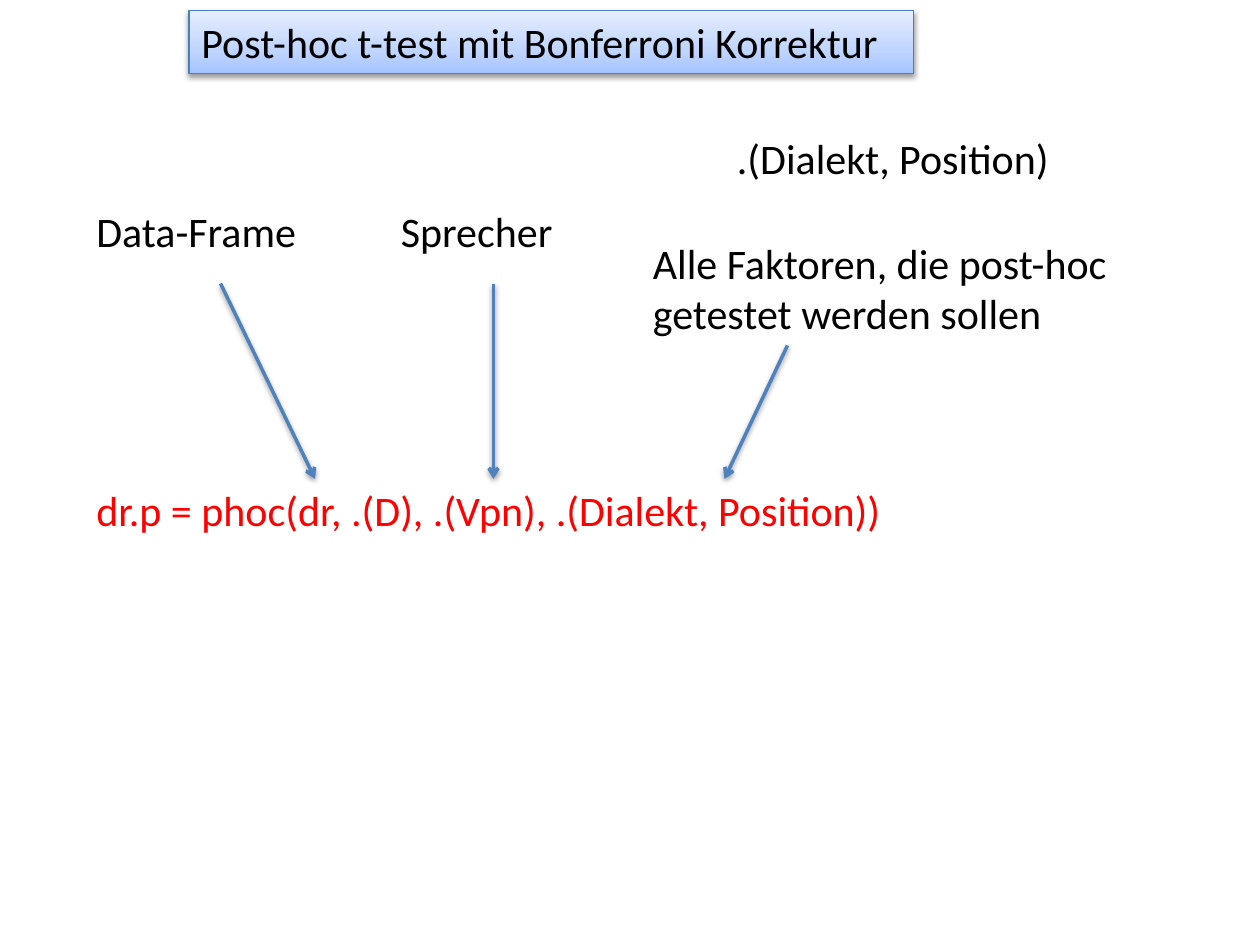
from copy import deepcopy

from pptx import Presentation
from pptx.dml.color import RGBColor as Rgb
from pptx.enum.shapes import MSO_CONNECTOR as Connector, MSO_SHAPE as Preset
from pptx.enum.text import MSO_ANCHOR as Anchor, MSO_AUTO_SIZE as AutoSize, PP_ALIGN as Align
from pptx.oxml import parse_xml
from pptx.oxml.ns import nsdecls, qn
from pptx.util import Inches, Pt

COLORS = {
    "text": "000000",
    "code": "FF0000",
    "arrow": "4F81BD",
    "border": "4B7EBC",
    "bottom": "A4C4FF",
    "middle": "BFD4FF",
    "top": "E6EEFF",
    "shadow": "000000",
}
COLUMNS, ROWS = 120, 90
UNIT = Inches(10) // COLUMNS
LINE_ROWS = 6


def color(name):
    return Rgb.from_string(COLORS[name])


def grid(*values):
    return [round(value * UNIT) for value in values]


def write_text(shape, text, size=24, font="Calibri", ink="text"):
    frame = shape.text_frame
    frame.word_wrap = True
    frame.auto_size = AutoSize.SHAPE_TO_FIT_TEXT
    frame.vertical_anchor = Anchor.TOP
    paragraph = frame.paragraphs[0]
    paragraph.alignment = Align.LEFT
    run = paragraph.add_run()
    run.text = text
    run.font.size = Pt(size)
    run.font.name = font
    run.font.color.rgb = color(ink)


def add_text(slide, text, box, **text_format):
    write_text(slide.shapes.add_textbox(*grid(*box)), text, **text_format)


def add_shadow(properties):
    for effects in properties.findall(qn("a:effectLst")):
        properties.remove(effects)
    properties.append(parse_xml(
        f'<a:effectLst {nsdecls("a")}>'
        f'<a:outerShdw blurRad="{Pt(3.1)}" dist="{Pt(1.6)}" dir="5400000" rotWithShape="0">'
        f'<a:srgbClr val="{COLORS["shadow"]}"><a:alpha val="38000"/></a:srgbClr>'
        '</a:outerShdw></a:effectLst>'
    ))


def fill_gradient(shape, stops):
    fill = shape.fill
    fill.gradient()
    fill.gradient_angle = 90
    stop_list = shape.element.spPr.find(qn("a:gradFill")).find(qn("a:gsLst"))
    while len(stop_list) < len(stops):
        stop_list.append(deepcopy(stop_list[-1]))
    for stop, (position, name) in zip(fill.gradient_stops, stops):
        stop.position = position
        stop.color.rgb = color(name)


def add_arrow(slide, start, end):
    arrow = slide.shapes.add_connector(Connector.STRAIGHT, *grid(*start, *end))
    arrow.line.color.rgb = color("arrow")
    arrow.line.width = Pt(2)
    arrow.line._get_or_add_ln().append(
        parse_xml(f'<a:tailEnd {nsdecls("a")} type="arrow"/>'))
    add_shadow(arrow.element.spPr)


def add_title(slide, box):
    title = slide.shapes.add_shape(Preset.RECTANGLE, *grid(*box))
    fill_gradient(title, [(0, "bottom"), (0.35, "middle"), (1, "top")])
    title.line.color.rgb = color("border")
    title.line.width = Pt(0.75)
    add_shadow(title.element.spPr)
    write_text(title, "Post-hoc t-test mit Bonferroni Korrektur")


def add_call_diagram(slide, box):
    left, top, width, height = box
    right = left + width
    code_top = top + height - LINE_ROWS
    label_top = top + 7
    factors_top = top + 10
    factors_height = 10.9
    arrow_top = label_top + 8

    add_text(slide, "dr.p = phoc(dr, .(D), .(Vpn), .(Dialekt, Position))",
             (left, code_top, 94, LINE_ROWS), ink="code")
    labels = [
        ("Data-Frame", 0, label_top, 25, LINE_ROWS),
        ("Sprecher", 29, label_top, 19, LINE_ROWS),
        (".(Dialekt, Position)", 61, top, 45, LINE_ROWS),
        ("Alle Faktoren, die post-hoc getestet werden sollen",
         53, factors_top, 53, factors_height),
    ]
    for text, column, row, columns, rows in labels:
        add_text(slide, text, (left + column, row, min(columns, right - left - column), rows))

    arrows = [
        (13, arrow_top, 22),
        (39, arrow_top, 39),
        (67, factors_top + factors_height, 61),
    ]
    for start_column, start_row, end_column in arrows:
        add_arrow(slide, (left + start_column, start_row), (left + end_column, code_top))


def main():
    presentation = Presentation()
    presentation.slide_width = COLUMNS * UNIT
    presentation.slide_height = ROWS * UNIT
    slide = presentation.slides.add_slide(presentation.slide_layouts[6])
    add_title(slide, (18, 1, 69, LINE_ROWS))
    add_call_diagram(slide, (8, 12, 106, 39.6))
    presentation.save("out.pptx")


if __name__ == "__main__":
    main()
